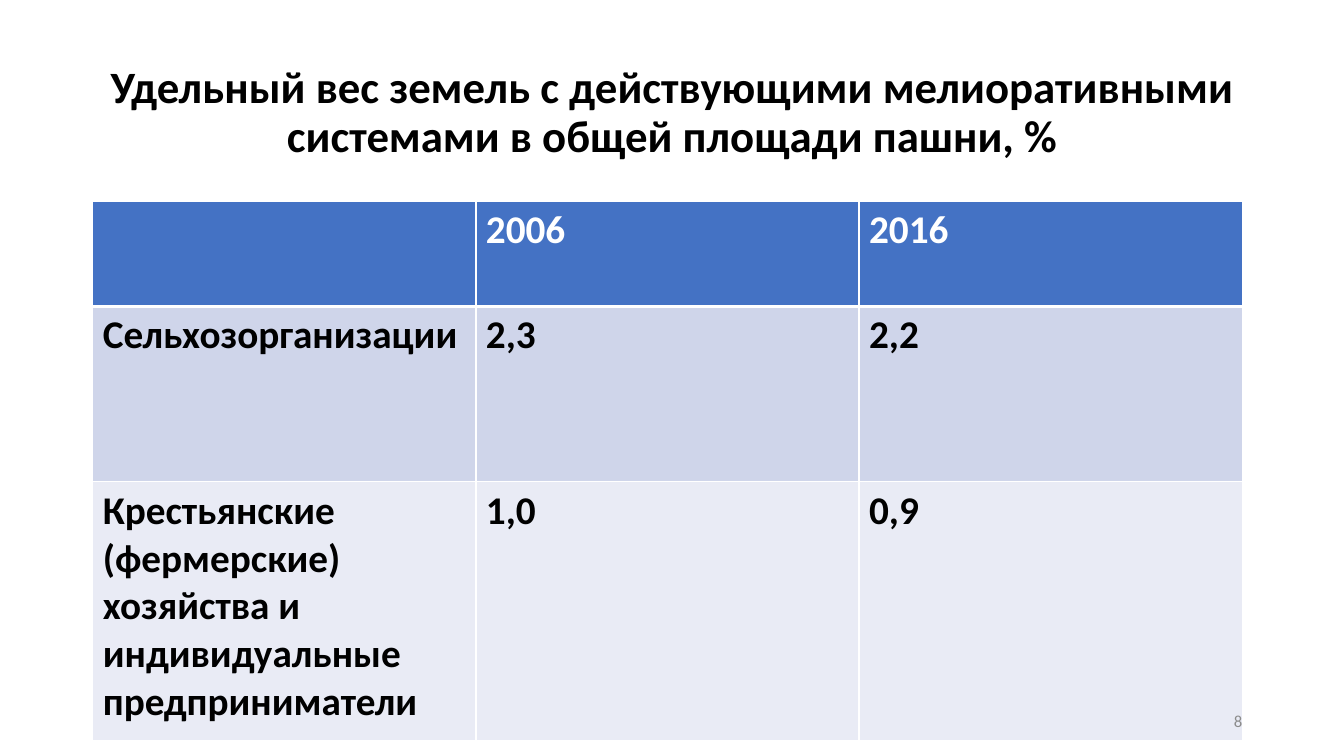
from pptx import Presentation
from pptx.dml.color import RGBColor
from pptx.enum.text import MSO_ANCHOR, PP_ALIGN
from pptx.oxml.ns import qn
from pptx.util import Inches, Pt
from lxml import etree

MIDDLE = MSO_ANCHOR.MIDDLE
LEFT, CENTER, RIGHT = PP_ALIGN.LEFT, PP_ALIGN.CENTER, PP_ALIGN.RIGHT
TITLE_ONLY = 5

COLORS = {
    "text": "000000",
    "white": "FFFFFF",
    "header": "4472C4",
    "band_dark": "CFD5EA",
    "band_light": "E9EBF5",
    "number": "8C8C8C",
}
ROWS = [
    ("", "2006", "2016"),
    ("Сельхозорганизации", "2,3", "2,2"),
    ("Крестьянские (фермерские) хозяйства и индивидуальные предприниматели", "1,0", "0,9"),
]
ROW_HEIGHTS = [1.04, 1.74, 2.57]
ROW_FILLS = ["header", "band_dark", "band_light"]
COLUMN_WIDTH = 3.8


class SlideBuilder:
    def __init__(self, slide, font="Calibri"):
        self.slide = slide
        self.font = font

    def color(self, name):
        return RGBColor.from_string(COLORS[name])

    def fill_text(self, frame, text, size, color, bold=False, align=LEFT, spacing=1.0):
        frame.word_wrap = True
        paragraph = frame.paragraphs[0]
        paragraph.alignment = align
        paragraph.line_spacing = spacing
        run = paragraph.add_run()
        run.text = text
        style = {"name": self.font, "size": Pt(size), "bold": bold}
        for attribute, value in style.items():
            setattr(run.font, attribute, value)
        run.font.color.rgb = self.color(color)

    def title(self, text, left, top, width, height):
        shape = self.slide.shapes.title
        box = {"left": left, "top": top, "width": width, "height": height}
        for attribute, value in box.items():
            setattr(shape, attribute, Inches(value))
        shape.text_frame.vertical_anchor = MIDDLE
        self.fill_text(shape.text_frame, text, 32, "text", True, CENTER, 0.9)

    def text(self, text, left, top, width, height, size, color, align):
        shape = self.slide.shapes.add_textbox(*map(Inches, (left, top, width, height)))
        shape.text_frame.vertical_anchor = MIDDLE
        self.fill_text(shape.text_frame, text, size, color, align=align)

    def borders(self, cell, widths):
        properties = cell._tc.get_or_add_tcPr()
        for side, width in widths.items():
            line = etree.SubElement(properties, qn(f"a:ln{side}"), w=str(Pt(width)))
            fill = etree.SubElement(line, qn("a:solidFill"))
            etree.SubElement(fill, qn("a:srgbClr"), val=COLORS["white"])

    def table(self, rows, left, top, column_width, row_heights, row_fills):
        columns = len(rows[0])
        size = (left, top, column_width * columns, sum(row_heights))
        table = self.slide.shapes.add_table(len(rows), columns, *map(Inches, size)).table
        for column in table.columns:
            column.width = Inches(column_width)
        for index, values in enumerate(rows):
            table.rows[index].height = Inches(row_heights[index])
            # A thick rule separates the header from the body
            widths = {"L": 1, "R": 1, "T": 3 if index == 1 else 1, "B": 3 if index == 0 else 1}
            for cell, value in zip(table.rows[index].cells, values):
                self.borders(cell, widths)
                cell.fill.solid()
                cell.fill.fore_color.rgb = self.color(row_fills[index])
                if value:
                    self.fill_text(cell.text_frame, value, 28, "text" if index else "white", True)


def main():
    presentation = Presentation()
    presentation.slide_width = Inches(13.33)
    presentation.slide_height = Inches(7.5)
    slide = presentation.slides.add_slide(presentation.slide_layouts[TITLE_ONLY])
    builder = SlideBuilder(slide)

    # Title
    builder.title(
        "Удельный вес земель с действующими мелиоративными системами в общей площади пашни, %",
        0.92, 0.4, 11.5, 1.45,
    )
    # Share of land by type of farm
    builder.table(ROWS, 0.92, 2, COLUMN_WIDTH, ROW_HEIGHTS, ROW_FILLS)
    # Slide number
    builder.text("8", 9.42, 6.95, 3, 0.4, 12, "number", RIGHT)

    presentation.save("out.pptx")


if __name__ == "__main__":
    main()
